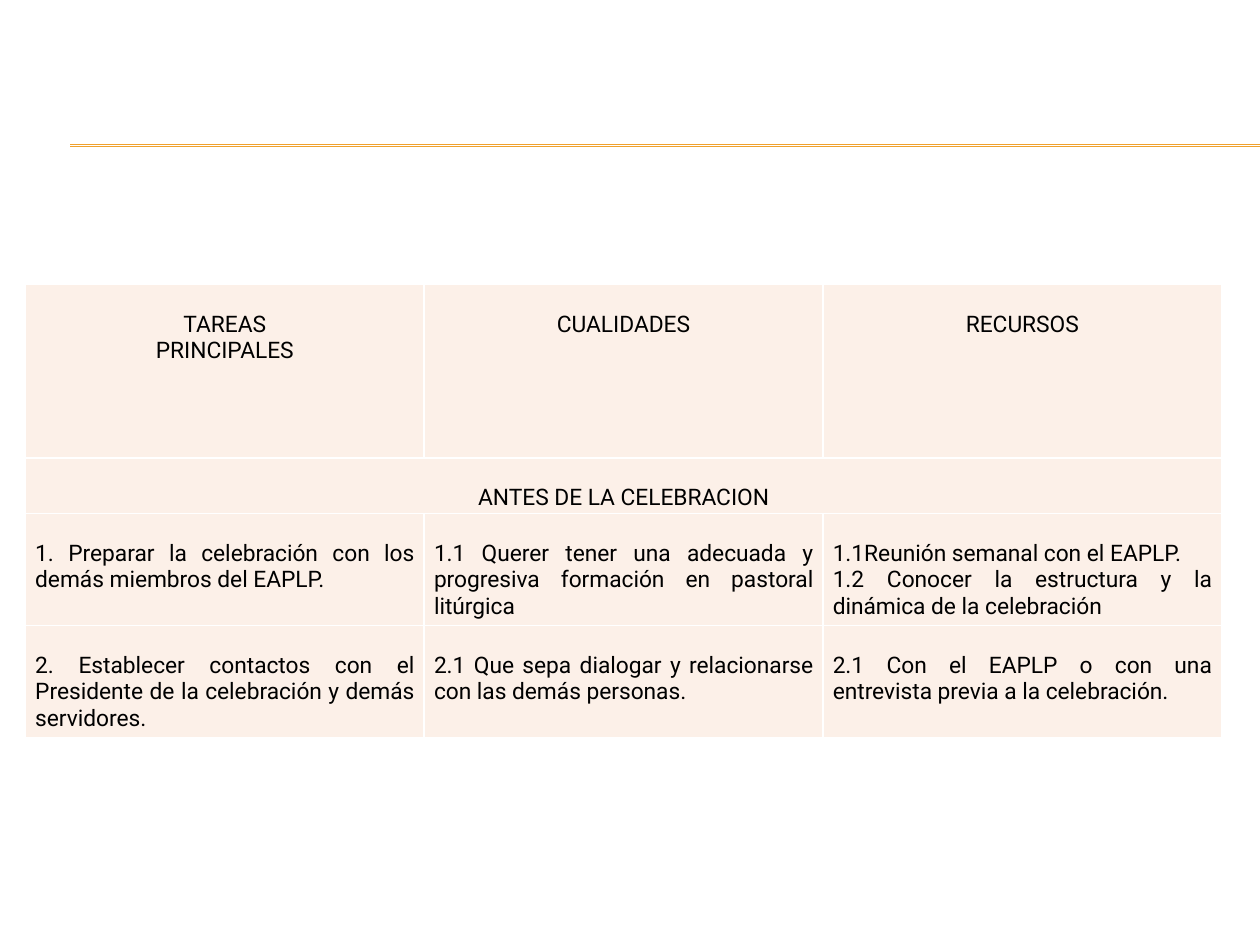
from dataclasses import dataclass

from lxml import etree
from pptx import Presentation
from pptx.dml.color import RGBColor
from pptx.enum.shapes import MSO_CONNECTOR
from pptx.enum.text import PP_ALIGN
from pptx.oxml.ns import qn
from pptx.util import Cm, Pt

STRAIGHT = MSO_CONNECTOR.STRAIGHT
CENTER = PP_ALIGN.CENTER
JUSTIFY = PP_ALIGN.JUSTIFY


@dataclass(frozen=True)
class Theme:
    font: str = "Roboto"
    size: float = 13
    text: str = "000000"
    cell: str = "FCF0E8"
    border: str = "FFFFFF"
    border_width: float = 1
    rule: str = "F0A22E"
    rule_width: float = 0.75


@dataclass(frozen=True)
class Row:
    height: float
    cells: tuple[str, ...]
    align: PP_ALIGN


THEME = Theme()
SLIDE_WIDTH, SLIDE_HEIGHT = 25.4, 19.05
RULE_LEFT = 1.42
RULE_TOPS = (2.92, 2.95)
TABLE_LEFT, TABLE_TOP = 0.51, 5.73
COLUMN_WIDTH = 8.04
SIDE_MARGIN, TOP_MARGIN = 0.2, 0.54

ROWS = (
    Row(3.5, ("TAREAS\nPRINCIPALES", "CUALIDADES", "RECURSOS"), CENTER),
    Row(1.12, ("ANTES DE LA CELEBRACION",), CENTER),
    Row(2.26, (
        "1. Preparar la celebración con los demás miembros del EAPLP.",
        "1.1 Querer tener una adecuada y progresiva formación en pastoral litúrgica",
        "1.1Reunión semanal con el EAPLP.\n"
        "1.2 Conocer la estructura y la dinámica de la celebración",
    ), JUSTIFY),
    Row(2.26, (
        "2. Establecer contactos con el Presidente de la celebración y demás servidores.",
        "2.1 Que sepa dialogar y relacionarse con las demás personas.",
        "2.1 Con el EAPLP o con una entrevista previa a la celebración.",
    ), JUSTIFY),
)


def write_text(tf, text: str, *, align: PP_ALIGN, size: float = THEME.size,
               color: str = THEME.text, font: str = THEME.font) -> None:
    for i, line in enumerate(text.split("\n")):
        p = tf.paragraphs[0] if i == 0 else tf.add_paragraph()
        p.alignment = align
        r = p.add_run()
        r.text = line
        r.font.name = font
        r.font.size = Pt(size)
        r.font.bold = False
        r.font.color.rgb = RGBColor.from_string(color)


def add_rule(slide, top: float) -> None:
    line = slide.shapes.add_connector(
        STRAIGHT, Cm(RULE_LEFT), Cm(top), Cm(SLIDE_WIDTH), Cm(top))
    line.line.color.rgb = RGBColor.from_string(THEME.rule)
    line.line.width = Pt(THEME.rule_width)
    etree.SubElement(line._element.spPr, qn("a:effectLst"))


def set_borders(cell) -> None:
    props = cell._tc.get_or_add_tcPr()
    for i, side in enumerate(("lnL", "lnR", "lnT", "lnB")):
        ln = etree.Element(qn(f"a:{side}"), w=str(Pt(THEME.border_width)))
        fill = etree.SubElement(ln, qn("a:solidFill"))
        etree.SubElement(fill, qn("a:srgbClr"), val=THEME.border)
        props.insert(i, ln)


def style_cell(cell) -> None:
    cell.fill.solid()
    cell.fill.fore_color.rgb = RGBColor.from_string(THEME.cell)
    cell.margin_left = cell.margin_right = Cm(SIDE_MARGIN)
    cell.margin_top, cell.margin_bottom = Cm(TOP_MARGIN), 0
    set_borders(cell)


def add_task_table(slide, rows: tuple[Row, ...]) -> None:
    columns = max(len(row.cells) for row in rows)
    table = slide.shapes.add_table(
        len(rows), columns, Cm(TABLE_LEFT), Cm(TABLE_TOP),
        Cm(columns * COLUMN_WIDTH), Cm(sum(row.height for row in rows))).table
    table.first_row = table.horz_banding = False
    for column in table.columns:
        column.width = Cm(COLUMN_WIDTH)
    for i, row in enumerate(rows):
        table.rows[i].height = Cm(row.height)
        for j in range(columns):
            style_cell(table.cell(i, j))
        if len(row.cells) == 1:
            table.cell(i, 0).merge(table.cell(i, columns - 1))
        for j, text in enumerate(row.cells):
            write_text(table.cell(i, j).text_frame, text, align=row.align)


def main() -> None:
    prs = Presentation()
    prs.slide_width, prs.slide_height = Cm(SLIDE_WIDTH), Cm(SLIDE_HEIGHT)
    slide = prs.slides.add_slide(prs.slide_layouts[6])
    for top in RULE_TOPS:
        add_rule(slide, top)
    add_task_table(slide, ROWS)
    prs.save("out.pptx")


if __name__ == "__main__":
    main()
